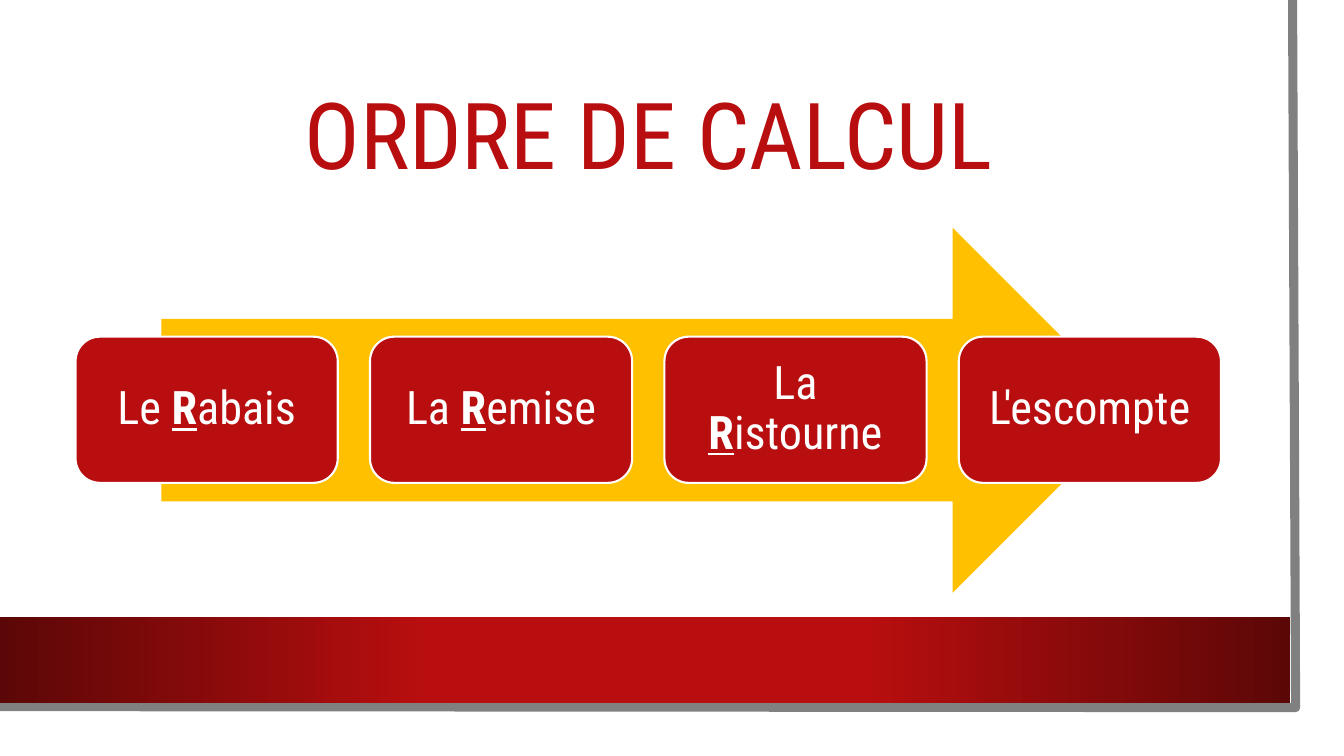
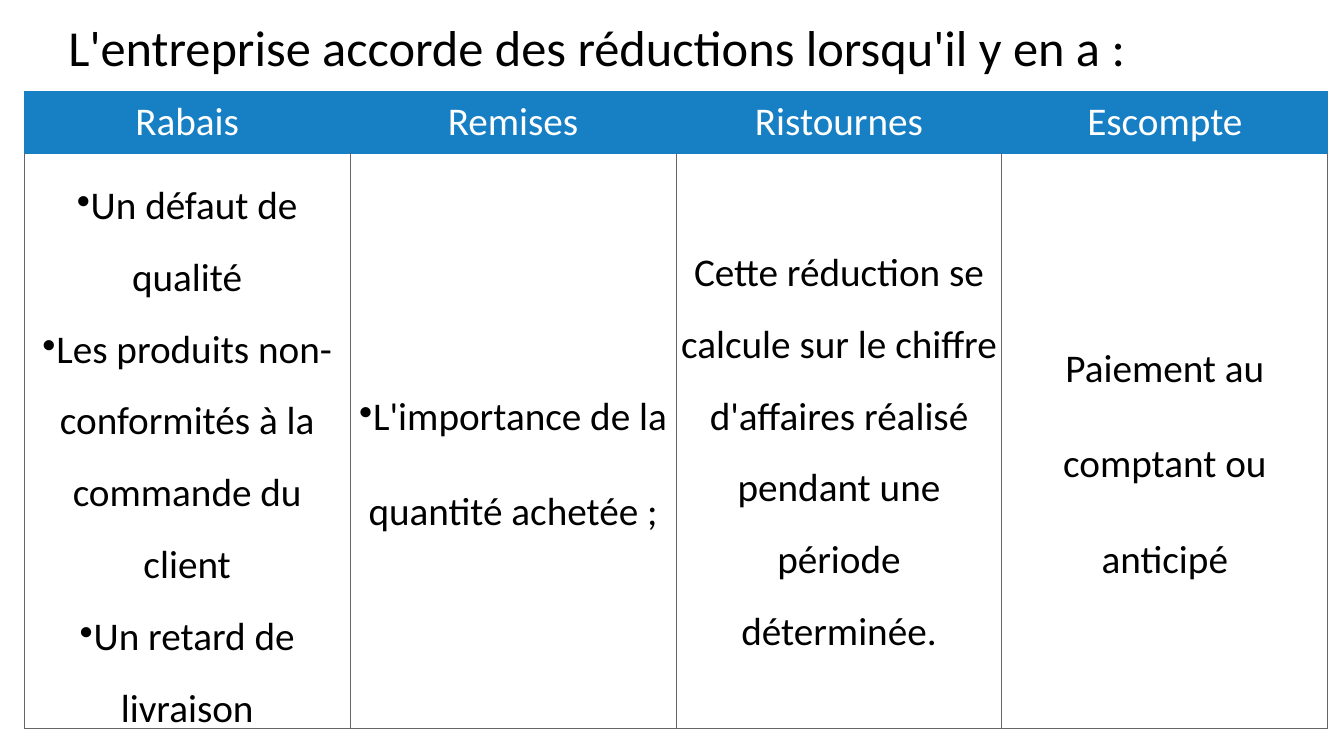
"""Build two slides on the order and the grounds of commercial price reductions."""
import lxml.etree
import pptx
import pptx.dml.color
import pptx.enum.shapes
import pptx.enum.text
import pptx.oxml.ns
import pptx.util

Inches = pptx.util.Inches
Pt = pptx.util.Pt
qn = pptx.oxml.ns.qn
SHAPE = pptx.enum.shapes.MSO_SHAPE
ALIGN = pptx.enum.text.PP_ALIGN
MIDDLE = pptx.enum.text.MSO_ANCHOR.MIDDLE

COLORS = {
    "red": "B80E0F",
    "dark_red": "5C0707",
    "gold": "FFC000",
    "frame": "808080",
    "blue": "177FC4",
    "rule": "666666",
    "white": "FFFFFF",
    "black": "000000",
}
TITLE_FONT = "Roboto Condensed"
BODY_FONT = "Calibri"


def rgb(name):
    return pptx.dml.color.RGBColor.from_string(COLORS[name])


def write(frame, *lines, size, font, color, align=ALIGN.CENTER, spacing=1.0, bullet=False):
    """Write one paragraph per line; text between underscores is bold and underlined."""
    frame.word_wrap = True
    for number, line in enumerate(lines):
        para = frame.paragraphs[0] if number == 0 else frame.add_paragraph()
        para.alignment = align
        para.line_spacing = spacing
        if bullet:
            properties = para._p.get_or_add_pPr()
            properties.set("marL", "0")
            properties.set("indent", "0")
            lxml.etree.SubElement(properties, qn("a:buChar")).set("char", "•")
        for position, part in enumerate(line.split("_")):
            span = para.add_run()
            span.text = part
            span.font.size = Pt(size)
            span.font.name = font
            span.font.color.rgb = rgb(color)
            span.font.bold = span.font.underline = position % 2 == 1


deck = pptx.Presentation()
deck.slide_width = Inches(13.33)
deck.slide_height = Inches(7.5)
blank = deck.slide_layouts[6]

page = deck.slides.add_slide(blank)
outline = page.shapes.build_freeform(Inches(12.82), Inches(0))
outline.add_line_segments(
    [(Inches(12.85), Inches(7.02)), (Inches(-0.03), Inches(7.01))], close=False
)
edge = outline.convert_to_shape()
edge.shadow.inherit = False
edge.fill.background()
edge.line.color.rgb = rgb("frame")
edge.line.width = Pt(6.5)

band = page.shapes.add_shape(SHAPE.RECTANGLE, Inches(0), Inches(6.12), Inches(12.8), Inches(0.85))
band.shadow.inherit = False
band.line.fill.background()
band.fill.gradient()
band.fill.gradient_angle = 0
stops = band._element.spPr.find(".//" + qn("a:gsLst"))
stops.clear()
for percent, name in ((0, "dark_red"), (33, "red"), (67, "red"), (100, "dark_red")):
    stop = lxml.etree.SubElement(stops, qn("a:gs"))
    stop.set("pos", str(percent * 1000))
    lxml.etree.SubElement(stop, qn("a:srgbClr")).set("val", COLORS[name])

title = page.shapes.add_textbox(Inches(0.75), Inches(0.75), Inches(11.37), Inches(1.26))
title.text_frame.vertical_anchor = MIDDLE
write(title.text_frame, "ORDRE DE CALCUL", size=66, font=TITLE_FONT, color="red", spacing=0.9)

arrow = page.shapes.add_shape(
    SHAPE.RIGHT_ARROW, Inches(1.6), Inches(2.26), Inches(9.66), Inches(3.62)
)
arrow.shadow.inherit = False
arrow.fill.solid()
arrow.fill.fore_color.rgb = rgb("gold")
arrow.line.fill.background()

for number, step in enumerate(("Le _R_abais", "La _R_emise", "La _R_istourne", "L'escompte")):
    box = page.shapes.add_shape(
        SHAPE.ROUNDED_RECTANGLE,
        Inches(0.75 + 2.92 * number), Inches(3.34), Inches(2.6), Inches(1.45),
    )
    box.shadow.inherit = False
    box.fill.solid()
    box.fill.fore_color.rgb = rgb("red")
    box.line.color.rgb = rgb("white")
    box.line.width = Pt(1.5)
    frame = box.text_frame
    frame.vertical_anchor = MIDDLE
    frame.margin_left = frame.margin_right = Inches(0.14)
    write(frame, step, size=33, font=TITLE_FONT, color="white", spacing=0.9)

page = deck.slides.add_slide(blank)
columns = [
    ("Rabais", 1.5, True, [
        "Un défaut de qualité",
        "Les produits non-conformités à la commande du client",
        "Un retard de livraison",
    ]),
    ("Remises", 2.0, True, ["L'importance de la quantité achetée\u00a0;"]),
    ("Ristournes", 1.5, False, [
        "Cette réduction se calcule sur le chiffre d'affaires réalisé "
        "pendant une période déterminée.",
    ]),
    ("Escompte", 2.0, False, ["Paiement au comptant ou anticipé"]),
]
table = page.shapes.add_table(
    2, len(columns), Inches(0.24), Inches(0.91), Inches(12.93), Inches(6.31)
).table
table.first_row = table.horz_banding = False
table.rows[0].height = Inches(0.61)
table.rows[1].height = Inches(5.7)

for column, (heading, spacing, bullet, reasons) in enumerate(columns):
    head, body = table.cell(0, column), table.cell(1, column)
    for cell, rule in ((head, "blue"), (body, "rule")):
        cell.vertical_anchor = MIDDLE
        cell.margin_left = cell.margin_right = Inches(0.03)
        cell.margin_top = cell.margin_bottom = Inches(0.05)
        for side in "LRTB":
            line = lxml.etree.SubElement(cell._tc.get_or_add_tcPr(), qn("a:ln" + side))
            line.set("w", str(Pt(0.75)))
            paint = lxml.etree.SubElement(line, qn("a:solidFill"))
            shade = "blue" if side == "T" else rule
            lxml.etree.SubElement(paint, qn("a:srgbClr")).set("val", COLORS[shade])
    head.fill.solid()
    head.fill.fore_color.rgb = rgb("blue")
    body.fill.background()
    write(head.text_frame, heading, size=28, font=BODY_FONT, color="white")
    write(body.text_frame, *reasons, size=28, font=BODY_FONT, color="black",
          spacing=spacing, bullet=bullet)

intro = page.shapes.add_textbox(Inches(0.58), Inches(0.1), Inches(11.81), Inches(0.71))
intro.text_frame.vertical_anchor = MIDDLE
write(intro.text_frame, "L'entreprise accorde des réductions lorsqu'il y en a :",
      size=36, font=BODY_FONT, color="black", align=ALIGN.LEFT)

deck.save("out.pptx")
